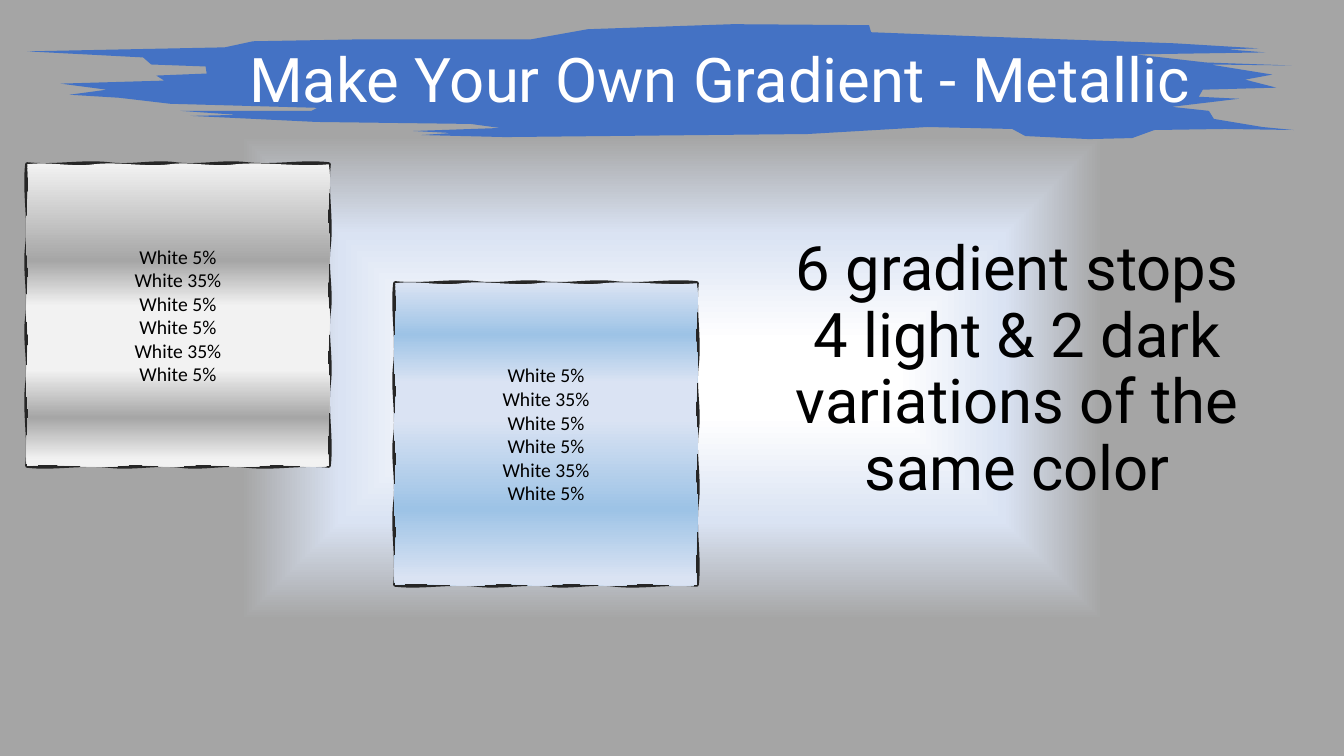
"""Build the metallic gradient slide with two sketched swatches and a brush-stroke title."""
import lxml.etree
import pptx
import pptx.dml.color
import pptx.enum.text
import pptx.oxml.ns
import pptx.util

Inches = pptx.util.Inches
Pt = pptx.util.Pt
RGBColor = pptx.dml.color.RGBColor
qn = pptx.oxml.ns.qn

BLUE = RGBColor(0x44, 0x72, 0xC4)
INK = RGBColor(0x26, 0x26, 0x26)
BLACK = RGBColor(0, 0, 0)
WHITE = RGBColor(255, 255, 255)
LIGHT_GRAY = RGBColor(0xF2, 0xF2, 0xF2)
DARK_GRAY = RGBColor(0xA6, 0xA6, 0xA6)
LIGHT_BLUE = RGBColor(0xDA, 0xE3, 0xF3)
DARK_BLUE = RGBColor(0x9D, 0xC3, 0xE6)
BACKDROP_GRAY = RGBColor(0xA5, 0xA5, 0xA5)

TITLE = ["Make Your Own Gradient - Metallic"]
ADVICE = ["6 gradient stops", "4 light & 2 dark variations of the same color"]
STOP_NAMES = ["White 5%", "White 35%", "White 5%"] * 2
TITLE_BOX = (1.39, 0.09, 11.5, 1.45)
ADVICE_BOX = (7.29, 2.12, 5.6, 3.11)

BACKDROP_STOPS = [(10, WHITE), (38, LIGHT_BLUE), (64, BACKDROP_GRAY)]
METAL_TONES = [0, 1, 0, 0, 1, 0]
GRAY_SWATCH = (0.27, 1.63, LIGHT_GRAY, DARK_GRAY, (0, 32, 47, 68, 84, 98))
BLUE_SWATCH = (3.92, 2.81, LIGHT_BLUE, DARK_BLUE, (0, 17, 33, 45, 75, 98))

UNIT = Inches(0.01)
SWATCH_SIDE = 299
CORNERS = [(0, 0), (SWATCH_SIDE, 0), (SWATCH_SIDE, SWATCH_SIDE), (0, SWATCH_SIDE)]
SKETCH_LAYERS = [
    ({"fill": "none"}, (0, 0.27, 0.49, 0.73, 1), 3),
    ({"stroke": 0}, (0, 0.22, 0.47, 0.69, 1), -3),
]
BRUSH_STROKE = [
    (1252, 126), (1204, 118), (1199, 110), (1162, 106), (1229, 98), (1189, 96),
    (1193, 89), (1266, 87), (1235, 79), (1262, 74), (1200, 64), (1281, 65),
    (1196, 62), (1126, 54), (1255, 52), (1217, 49), (1248, 48), (1165, 43),
    (967, 36), (864, 32), (862, 25), (727, 24), (583, 29), (527, 39),
    (361, 39), (251, 41), (223, 47), (27, 51), (142, 57), (150, 64),
    (204, 66), (205, 73), (155, 75), (163, 80), (60, 83), (106, 89),
    (69, 94), (118, 97), (169, 103), (315, 107), (309, 110), (179, 110),
    (236, 114), (189, 115), (252, 118), (314, 121), (467, 123), (496, 127),
    (410, 130), (448, 132), (418, 134), (501, 136), (698, 134), (801, 133),
    (920, 126), (1004, 128), (1017, 135), (1080, 138), (1123, 137),
    (1145, 129), (1215, 128), (1283, 129),
]


def add_node(parent, tag, **attributes):
    return lxml.etree.SubElement(parent, qn(tag), {k: str(v) for k, v in attributes.items()})


def fill_gradient(fill, holder, stops, radial=False):
    fill.gradient()
    gradient = holder.find(".//" + qn("a:gradFill"))
    for child in list(gradient):
        gradient.remove(child)
    stop_list = add_node(gradient, "a:gsLst")
    for percent, color in stops:
        stop = add_node(stop_list, "a:gs", pos=percent * 1000)
        add_node(stop, "a:srgbClr", val=color)
    if radial:
        center = add_node(gradient, "a:path", path="shape")
        add_node(center, "a:fillToRect", l=50000, t=50000, r=50000, b=50000)
    else:
        add_node(gradient, "a:lin", ang=5400000, scaled=0)


def write_lines(frame, lines, font, size, color, spacing=1.0):
    frame.word_wrap = True
    frame.vertical_anchor = pptx.enum.text.MSO_ANCHOR.MIDDLE
    for index, line in enumerate(lines):
        paragraph = frame.paragraphs[0] if index == 0 else frame.add_paragraph()
        paragraph.alignment = pptx.enum.text.PP_ALIGN.CENTER
        paragraph.line_spacing = spacing
        run = paragraph.add_run()
        run.text = line
        run.font.name = font
        run.font.size = Pt(size)
        run.font.color.rgb = color


def add_outline(slide, points, left=0, top=0):
    builder = slide.shapes.build_freeform(*points[0], scale=UNIT)
    builder.add_line_segments(points[1:], close=True)
    outline = builder.convert_to_shape(Inches(left), Inches(top))
    outline.shadow.inherit = False
    return outline


def wavy_curves(joints, wobble):
    """Yield three points per curve, swaying to either side of each edge."""
    for (x0, y0), (x1, y1) in zip(CORNERS, CORNERS[1:] + CORNERS[:1]):
        along = ((x1 - x0) / SWATCH_SIDE, (y1 - y0) / SWATCH_SIDE)
        for start, end in zip(joints, joints[1:]):
            steps = [(1 / 3, wobble), (2 / 3, -wobble), (1, 0)]
            curve = []
            for share, sway in steps:
                reach = (start + (end - start) * share) * SWATCH_SIDE
                curve.append((round(x0 + along[0] * reach - along[1] * sway),
                              round(y0 + along[1] * reach + along[0] * sway)))
            yield curve


def add_swatch(slide, left, top, light, dark, positions):
    swatch = add_outline(slide, CORNERS, left, top)
    contours = swatch.element.find(".//" + qn("a:pathLst"))
    contours.remove(contours[0])
    for role, joints, wobble in SKETCH_LAYERS:
        contour = add_node(contours, "a:path", w=SWATCH_SIDE, h=SWATCH_SIDE, **role)
        add_node(add_node(contour, "a:moveTo"), "a:pt", x=0, y=0)
        for curve in wavy_curves(joints, wobble):
            bend = add_node(contour, "a:cubicBezTo")
            for x, y in curve:
                add_node(bend, "a:pt", x=x, y=y)
        add_node(contour, "a:close")
    tones = [(light, dark)[tone] for tone in METAL_TONES]
    fill_gradient(swatch.fill, swatch.element, zip(positions, tones))
    swatch.line.color.rgb = INK
    swatch.line.width = Pt(3)
    write_lines(swatch.text_frame, STOP_NAMES, "Calibri", 14, BLACK)


def add_heading(slide, box, lines, color):
    heading = slide.shapes.add_textbox(*map(Inches, box))
    write_lines(heading.text_frame, lines, "Roboto", 44, color, 0.9)


def main():
    deck = pptx.Presentation()
    deck.slide_width = Inches(13.33)
    deck.slide_height = Inches(7.5)
    slide = deck.slides.add_slide(deck.slide_layouts[6])
    fill_gradient(slide.background.fill, slide.element, BACKDROP_STOPS, radial=True)
    add_swatch(slide, *GRAY_SWATCH)
    brush = add_outline(slide, BRUSH_STROKE)
    brush.fill.solid()
    brush.fill.fore_color.rgb = BLUE
    brush.line.fill.background()
    add_heading(slide, TITLE_BOX, TITLE, WHITE)
    add_heading(slide, ADVICE_BOX, ADVICE, BLACK)
    add_swatch(slide, *BLUE_SWATCH)
    deck.save("out.pptx")


if __name__ == "__main__":
    main()
